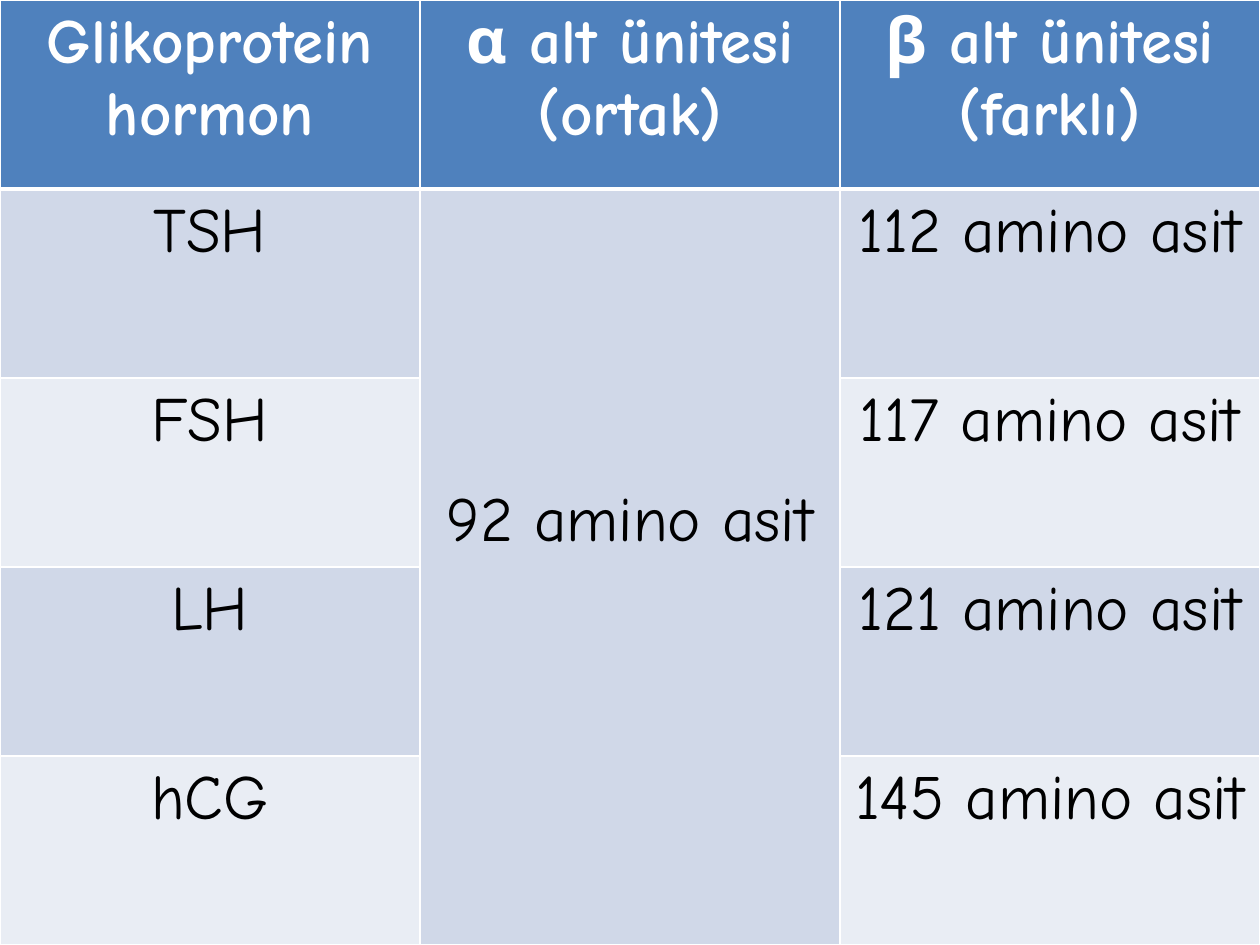
from dataclasses import dataclass

from pptx import Presentation
from pptx.dml.color import RGBColor
from pptx.enum.text import MSO_ANCHOR, PP_ALIGN
from pptx.oxml import parse_xml
from pptx.oxml.ns import nsdecls
from pptx.table import _Cell as Cell
from pptx.util import Inches, Pt

COLORS = {
    "header": "4F81BD",
    "band_dark": "D0D8E8",
    "band_light": "E9EDF4",
    "white": "FFFFFF",
    "text": "000000",
}
FONT = "Comic Neue"


@dataclass
class Hormone:
    name: str
    beta: str


HEADERS = ["Glikoprotein hormon", "α alt ünitesi (ortak)", "β alt ünitesi\n(farklı)"]
ALPHA = "92 amino asit"
HORMONES = [
    Hormone("TSH", "112 amino asit"),
    Hormone("FSH", "117 amino asit"),
    Hormone("LH", "121 amino asit"),
    Hormone("hCG", "145 amino asit"),
]


def style_cell(cell: Cell, fill: str, top: float = 1, bottom: float = 1) -> None:
    """Fill a cell and give it white borders; widths are in points."""
    cell.fill.solid()
    cell.fill.fore_color.rgb = RGBColor.from_string(COLORS[fill])
    tc_pr = cell._tc.get_or_add_tcPr()
    widths = {"lnL": 1, "lnR": 1, "lnT": top, "lnB": bottom}
    for i, (tag, width) in enumerate(widths.items()):
        tc_pr.insert(i, parse_xml(
            f'<a:{tag} {nsdecls("a")} w="{Pt(width)}"><a:solidFill>'
            f'<a:srgbClr val="{COLORS["white"]}"/></a:solidFill></a:{tag}>'))


def write_cell(cell: Cell, text: str, color: str = "text", bold: bool = False) -> None:
    cell.text = text
    for p in cell.text_frame.paragraphs:
        p.alignment = PP_ALIGN.CENTER
        p.font.name = FONT
        p.font.size = Pt(36)
        p.font.bold = bold
        p.font.color.rgb = RGBColor.from_string(COLORS[color])
        for r in p.runs:
            r.font.name = FONT
            r.font.size = Pt(36)
            r.font.bold = bold
            r.font.color.rgb = RGBColor.from_string(COLORS[color])


def main() -> None:
    prs = Presentation()
    prs.slide_width, prs.slide_height = Inches(10), Inches(7.5)
    s = prs.slides.add_slide(prs.slide_layouts[6])

    # Table filling the slide
    table = s.shapes.add_table(len(HORMONES) + 1, len(HEADERS), 0, 0,
                               prs.slide_width, prs.slide_height).table

    # Header row
    for col, header in enumerate(HEADERS):
        style_cell(table.cell(0, col), "header", bottom=3)
        write_cell(table.cell(0, col), header, "white", bold=True)

    # Hormone rows in alternating bands
    for row, hormone in enumerate(HORMONES, start=1):
        band = "band_dark" if row % 2 else "band_light"
        for col, fill in enumerate([band, "band_dark", band]):
            style_cell(table.cell(row, col), fill, top=3 if row == 1 else 1)
        write_cell(table.cell(row, 0), hormone.name)
        write_cell(table.cell(row, 2), hormone.beta)

    # Shared alpha subunit, set a little above the middle
    alpha = table.cell(1, 1)
    alpha.merge(table.cell(len(HORMONES), 1))
    write_cell(alpha, ALPHA)
    alpha.vertical_anchor = MSO_ANCHOR.MIDDLE
    alpha.margin_bottom = Inches(0.78)

    prs.save("out.pptx")


if __name__ == "__main__":
    main()
